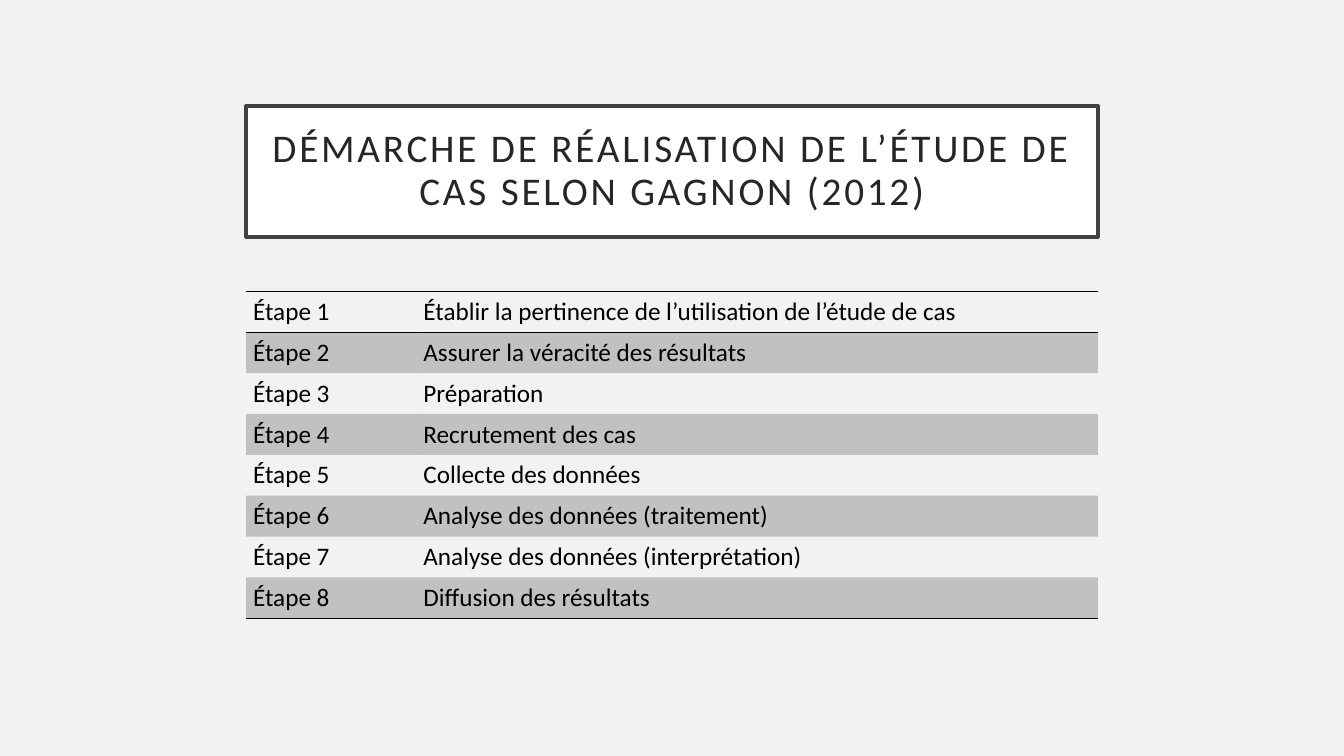
from lxml import etree
from pptx import Presentation
from pptx.dml.color import RGBColor
from pptx.enum.text import MSO_ANCHOR, MSO_AUTO_SIZE, PP_ALIGN
from pptx.oxml.ns import qn
from pptx.util import Inches, Pt

CENTER, LEFT = PP_ALIGN.CENTER, PP_ALIGN.LEFT
MIDDLE, TOP = MSO_ANCHOR.MIDDLE, MSO_ANCHOR.TOP
NO_FIT = MSO_AUTO_SIZE.NONE

TITLE = "DÉMARCHE DE RÉALISATION DE L’ÉTUDE DE CAS SELON GAGNON (2012)"
STEPS = [
    "Établir la pertinence de l’utilisation de l’étude de cas",
    "Assurer la véracité des résultats",
    "Préparation",
    "Recrutement des cas",
    "Collecte des données",
    "Analyse des données (traitement)",
    "Analyse des données (interprétation)",
    "Diffusion des résultats",
]
FONT = "Calibri"
NO_STYLE = "{2D5ABB26-0587-4C30-8999-92F81FD0307C}"
SLIDE_W, SLIDE_H = 13.33, 7.5
BLOCK_W = 8.45
LEFT_EDGE = (SLIDE_W - BLOCK_W) / 2
TITLE_TOP, TITLE_H = 1.05, 1.3
TABLE_TOP, ROW_H = 2.89, 0.405
LABEL_SHARE = 0.2


def rgb(value):
    return RGBColor.from_string(value)


def write(tf, text, size, color, align=LEFT, line_spacing=None, tracking=None):
    p = tf.paragraphs[0]
    p.alignment = align
    p.line_spacing = line_spacing
    r = p.add_run()
    r.text = text
    r.font.name = FONT
    r.font.size = Pt(size)
    r.font.color.rgb = rgb(color)
    if tracking:
        r._r.get_or_add_rPr().set("spc", str(tracking * 100))


def add_border(cell, side, color, width):
    tc_pr = cell._tc.get_or_add_tcPr()
    ln = etree.SubElement(tc_pr, qn(f"a:ln{side}"), w=str(Pt(width)))
    fill = etree.SubElement(ln, qn("a:solidFill"))
    etree.SubElement(fill, qn("a:srgbClr"), val=color)


def shade(cell, color, opacity):
    cell.fill.solid()
    cell.fill.fore_color.rgb = rgb(color)
    clr = cell._tc.tcPr.find(".//" + qn("a:solidFill") + "[last()]/" + qn("a:srgbClr"))
    for clr in cell._tc.tcPr.findall(qn("a:solidFill") + "/" + qn("a:srgbClr")):
        etree.SubElement(clr, qn("a:alpha"), val=str(opacity * 1000))


def add_title(s):
    sp = s.shapes.title
    sp.left, sp.top = Inches(LEFT_EDGE), Inches(TITLE_TOP)
    sp.width, sp.height = Inches(BLOCK_W), Inches(TITLE_H)
    sp.fill.solid()
    sp.fill.fore_color.rgb = rgb("FFFFFF")
    sp.line.color.rgb = rgb("404040")
    sp.line.width = Pt(2.5)
    tf = sp.text_frame
    tf.word_wrap = True
    tf.auto_size = NO_FIT
    tf.vertical_anchor = MIDDLE
    tf.margin_left = tf.margin_right = tf.margin_top = tf.margin_bottom = Inches(0.2)
    write(tf, TITLE, 28, "262626", align=CENTER, line_spacing=0.9, tracking=2)


def add_steps(s):
    last = len(STEPS) - 1
    frame = s.shapes.add_table(
        len(STEPS), 2, Inches(LEFT_EDGE), Inches(TABLE_TOP),
        Inches(BLOCK_W), Inches(ROW_H * len(STEPS)))
    table = frame.table
    table.first_row = table.horz_banding = False
    table._tbl.tblPr.find(qn("a:tableStyleId")).text = NO_STYLE
    for column, share in zip(table.columns, (LABEL_SHARE, 1 - LABEL_SHARE)):
        column.width = Inches(BLOCK_W * share)
    for i, step in enumerate(STEPS):
        for cell, text in zip(table.rows[i].cells, (f"Étape {i + 1}", step)):
            cell.margin_left = cell.margin_right = Inches(0.07)
            cell.margin_top = cell.margin_bottom = Inches(0.05)
            cell.vertical_anchor = TOP
            write(cell.text_frame, text, 18, "000000")
            if i == 0:
                add_border(cell, "T", "000000", 1)
            if i in (0, last):
                add_border(cell, "B", "000000", 1)
            if i % 2:
                shade(cell, "000000", 20)
            else:
                cell.fill.background()


def main():
    prs = Presentation()
    prs.slide_width, prs.slide_height = Inches(SLIDE_W), Inches(SLIDE_H)
    s = prs.slides.add_slide(prs.slide_layouts[5])
    s.background.fill.solid()
    s.background.fill.fore_color.rgb = rgb("F2F2F2")
    add_title(s)
    add_steps(s)
    prs.save("out.pptx")


if __name__ == "__main__":
    main()
